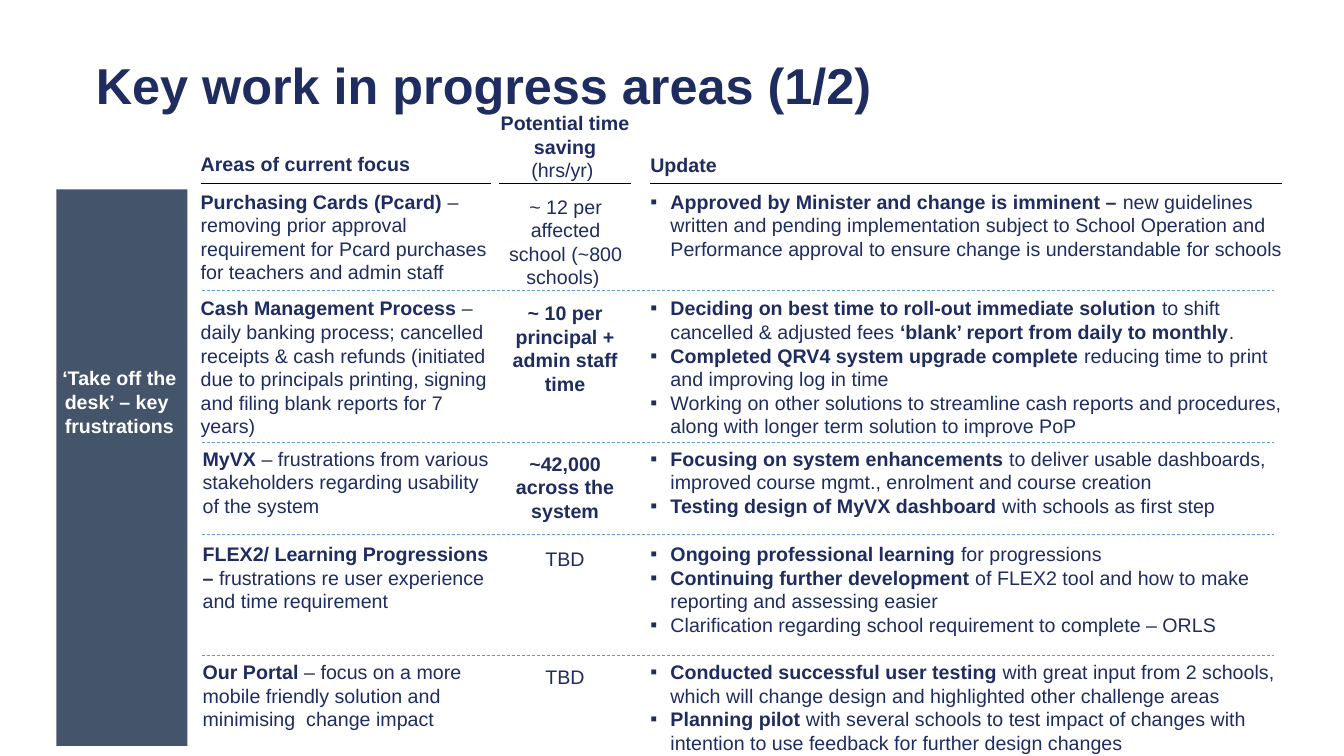
from dataclasses import dataclass
from typing import Optional

from lxml.etree import SubElement
from pptx import Presentation
from pptx.dml.color import RGBColor
from pptx.enum.dml import MSO_LINE
from pptx.enum.shapes import MSO_CONNECTOR, MSO_SHAPE
from pptx.enum.text import MSO_ANCHOR, MSO_AUTO_SIZE, PP_ALIGN
from pptx.oxml.ns import qn
from pptx.shapes.base import BaseShape
from pptx.slide import Slide
from pptx.util import Emu, Pt

NAVY = RGBColor(0x1F, 0x2C, 0x5F)
SLATE = RGBColor(0x44, 0x54, 0x6A)
BLUE = RGBColor(0x5B, 0x9B, 0xD5)
BLACK = RGBColor(0x00, 0x00, 0x00)
WHITE = RGBColor(0xFF, 0xFF, 0xFF)

EMU_PER_PX = 9144
FONT = "Arial"
BOLD_MARK = "|"
BULLET_INDENT = 20
HEADER_RULE_Y = 182
DIVIDER_LEFT, DIVIDER_RIGHT = 200, 1264
UPDATE_LEFT, UPDATE_WIDTH = 645, 628


@dataclass(frozen=True)
class Box:
    left: int
    top: int
    width: int
    height: int


@dataclass(frozen=True)
class Header:
    box: Box
    lines: list[str]
    rule_left: int
    rule_right: int
    align: PP_ALIGN = PP_ALIGN.LEFT
    wrap: bool = True


@dataclass(frozen=True)
class FocusRow:
    area: str
    area_box: Box
    saving: str
    saving_box: Box
    updates: list[str]
    update_height: int
    divider_y: Optional[int] = None


HEADERS = [
    Header(Box(199, 151, 288, 24), ["|Areas of current focus"], 199, 487),
    Header(Box(495, 110, 131, 71), ["|Potential time saving", "(hrs/yr) "], 495, 626, PP_ALIGN.CENTER),
    Header(Box(645, 152, 71, 24), ["|Update"], 645, 1272, wrap=False),
]

ROWS = [
    FocusRow(
        "|Purchasing Cards (Pcard) |–removing prior approval requirement for Pcard purchases "
        "for teachers and admin staff",
        Box(199, 188, 288, 94),
        "~ 12 per affected school (~800 schools) ",
        Box(489, 188, 144, 81),
        ["|Approved by Minister and change is imminent – |new guidelines written and pending "
         "implementation subject to School Operation and Performance approval to ensure change "
         "is understandable for schools"],
        94, 288,
    ),
    FocusRow(
        "|Cash Management Process |– daily banking process; cancelled receipts & cash refunds "
        "(initiated due to principals printing, signing and filing blank reports for 7 years)",
        Box(199, 294, 288, 141),
        "|~ 10 per principal + admin staff time",
        Box(495, 294, 131, 104),
        ["|Deciding on best time to roll-out immediate solution |to shift cancelled & adjusted "
         "fees |‘blank’ report from daily to monthly|.",
         "|Completed QRV4 system upgrade complete |reducing time to print and improving log in time",
         "Working on other solutions to streamline cash reports and procedures, along with "
         "longer term solution to improve PoP"],
        141, 439,
    ),
    FocusRow(
        "|MyVX |– frustrations from various stakeholders regarding usability of the system",
        Box(201, 443, 287, 71),
        "|~42,000 across the system",
        Box(495, 443, 131, 81),
        ["|Focusing on system enhancements| to deliver usable dashboards, improved course mgmt., "
         "enrolment and course creation",
         "|Testing design of MyVX dashboard |with schools as first step"],
        71, 530,
    ),
    FocusRow(
        "|FLEX2/ Learning Progressions – |frustrations re user experience and time requirement",
        Box(201, 538, 288, 71),
        "TBD",
        Box(495, 538, 131, 34),
        ["|Ongoing professional learning| for progressions",
         "|Continuing further development |of FLEX2 tool and how to make reporting and assessing easier",
         "Clarification regarding school requirement to complete – ORLS"],
        94, 650,
    ),
    FocusRow(
        "|Our Portal |– focus on a more mobile friendly solution and minimising  change impact",
        Box(201, 655, 288, 71),
        "TBD",
        Box(495, 655, 131, 34),
        ["|Conducted successful user testing |with great input from 2 schools, which will change "
         "design and highlighted other challenge areas",
         "|Planning pilot |with several schools to test impact of changes with intention to use "
         "feedback for further design changes"],
        94,
    ),
]


def px(value: int) -> Emu:
    return Emu(value * EMU_PER_PX)


def place(shape: BaseShape, box: Box) -> None:
    shape.left, shape.top = px(box.left), px(box.top)
    shape.width, shape.height = px(box.width), px(box.height)


def add_box(slide: Slide, box: Box) -> BaseShape:
    return slide.shapes.add_textbox(px(box.left), px(box.top), px(box.width), px(box.height))


def write(shape: BaseShape, lines: list[str], align: PP_ALIGN = PP_ALIGN.LEFT,
          color: RGBColor = NAVY, size: int = 14, inset: bool = False,
          wrap: bool = True, bullets: bool = False) -> None:
    frame = shape.text_frame
    frame.word_wrap = wrap
    frame.auto_size = MSO_AUTO_SIZE.NONE
    if not inset:
        frame.margin_left = frame.margin_right = frame.margin_top = frame.margin_bottom = 0
    for index, line in enumerate(lines):
        paragraph = frame.add_paragraph() if index else frame.paragraphs[0]
        paragraph.alignment = align
        paragraph.space_before = Pt(0)
        for position, part in enumerate(line.split(BOLD_MARK)):
            if part:
                run = paragraph.add_run()
                run.text = part
                run.font.name = FONT
                run.font.size = Pt(size)
                run.font.bold = position % 2 == 1
                run.font.color.rgb = color
        if bullets:
            properties = paragraph._p.get_or_add_pPr()
            properties.set("marL", str(px(BULLET_INDENT)))
            properties.set("indent", str(-px(BULLET_INDENT)))
            SubElement(properties, qn("a:buFont")).set("typeface", FONT)
            SubElement(properties, qn("a:buChar")).set("char", "▪")


def add_rule(slide: Slide, left: int, right: int, y: int, color: RGBColor,
             dashed: bool = False) -> None:
    rule = slide.shapes.add_connector(MSO_CONNECTOR.STRAIGHT, px(left), px(y), px(right), px(y))
    rule.line.color.rgb = color
    rule.line.width = Pt(0.5)
    if dashed:
        rule.line.dash_style = MSO_LINE.DASH
    SubElement(rule._element.spPr, qn("a:effectLst"))


def main() -> None:
    presentation = Presentation()
    presentation.slide_width, presentation.slide_height = px(1333), px(750)
    slide = presentation.slides.add_slide(presentation.slide_layouts[1])
    title, first_update = slide.placeholders

    place(title, Box(85, 69, 1164, 36))
    write(title, ["|Key work in progress areas (1/2)"], size=36, inset=True)
    title.text_frame.vertical_anchor = MSO_ANCHOR.MIDDLE
    title.text_frame.paragraphs[0].line_spacing = 0.9

    banner = slide.shapes.add_shape(MSO_SHAPE.RECTANGLE, px(56), px(188), px(130), px(552))
    banner.shadow.inherit = False
    banner.fill.solid()
    banner.fill.fore_color.rgb = SLATE
    banner.line.fill.background()
    label = add_box(slide, Box(40, 358, 157, 81))
    write(label, ["|‘Take off the desk’ – key ", "|frustrations"], PP_ALIGN.CENTER, WHITE, inset=True)
    label.text_frame.vertical_anchor = MSO_ANCHOR.MIDDLE

    for header in HEADERS:
        write(add_box(slide, header.box), header.lines, header.align, wrap=header.wrap)
        add_rule(slide, header.rule_left, header.rule_right, HEADER_RULE_Y, BLACK)

    for index, row in enumerate(ROWS):
        write(add_box(slide, row.area_box), [row.area])
        write(add_box(slide, row.saving_box), [row.saving], PP_ALIGN.CENTER, inset=True)
        update_box = Box(UPDATE_LEFT, row.area_box.top, UPDATE_WIDTH, row.update_height)
        update = add_box(slide, update_box) if index else first_update
        place(update, update_box)
        write(update, row.updates, bullets=True)
        if row.divider_y is not None:
            add_rule(slide, DIVIDER_LEFT, DIVIDER_RIGHT, row.divider_y, BLUE, dashed=True)

    presentation.save("out.pptx")


if __name__ == "__main__":
    main()
